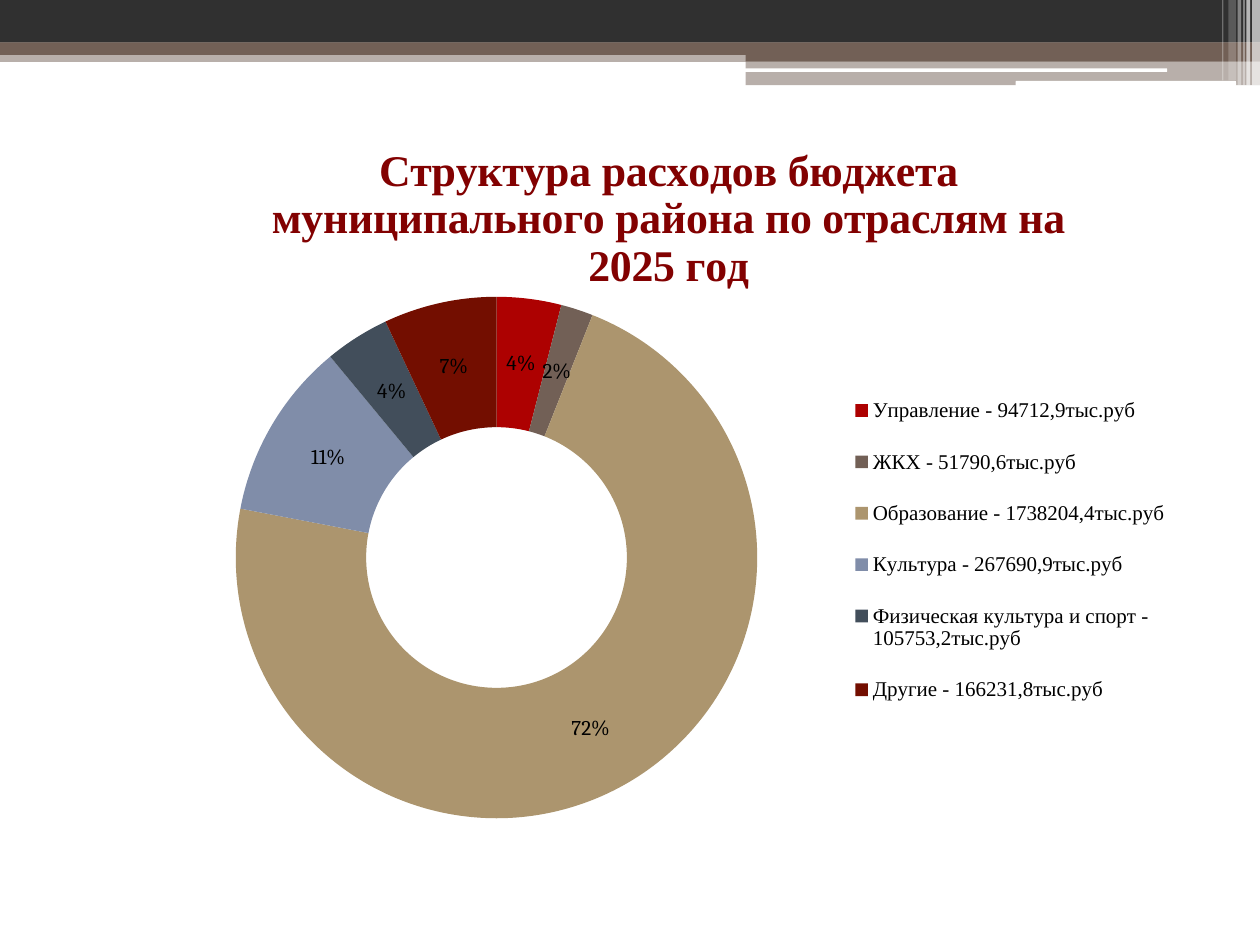
from lxml.etree import SubElement
from pptx import Presentation
from pptx.chart.data import CategoryChartData
from pptx.dml.color import RGBColor
from pptx.enum.chart import XL_CHART_TYPE as ChartType, XL_LEGEND_POSITION as LegendPosition
from pptx.enum.shapes import MSO_SHAPE as Shape
from pptx.oxml import parse_xml
from pptx.oxml.ns import nsdecls, qn
from pptx.util import Pt

WHITE = RGBColor(0xFF, 0xFF, 0xFF)
BLACK = RGBColor(0x00, 0x00, 0x00)
CHARCOAL = RGBColor(0x30, 0x30, 0x30)
BROWN = RGBColor(0x72, 0x60, 0x56)
TITLE_RED = RGBColor(0x82, 0x01, 0x01)
RED = RGBColor(0xAD, 0x01, 0x01)
SAND = RGBColor(0xAC, 0x95, 0x6E)
BLUE = RGBColor(0x80, 0x8D, 0xA9)
SLATE = RGBColor(0x42, 0x4E, 0x5B)
MAROON = RGBColor(0x73, 0x0E, 0x00)

TITLE = "Структура расходов бюджета муниципального района по отраслям на 2025 год"
EXPENSES = [
    ("Управление - 94712,9тыс.руб", 4, RED),
    ("ЖКХ - 51790,6тыс.руб", 2, BROWN),
    ("Образование - 1738204,4тыс.руб", 72, SAND),
    ("Культура - 267690,9тыс.руб", 11, BLUE),
    ("Физическая культура и спорт - 105753,2тыс.руб", 4, SLATE),
    ("Другие - 166231,8тыс.руб", 7, MAROON),
]


def add_bar(slide, left, top, width, height, color, opacity=100, kind=Shape.RECTANGLE):
    bar = slide.shapes.add_shape(kind, Pt(left), Pt(top), Pt(width), Pt(height))
    bar.shadow.inherit = False
    bar.line.fill.background()
    bar.fill.solid()
    bar.fill.fore_color.rgb = color
    if opacity < 100:
        color_element = bar.fill._xPr.find(".//" + qn("a:srgbClr"))
        SubElement(color_element, qn("a:alpha"), val=str(opacity * 1000))


def add_header(slide, left, top, width):
    right = left + width
    tab_width = 293.9
    tab_left = right - tab_width
    add_bar(slide, left, top + 28.8, width, 6.6, BROWN, 50)
    add_bar(slide, left, top, width, 24.4, CHARCOAL)
    add_bar(slide, left, top + 24.2, width, 7.2, BROWN)
    add_bar(slide, tab_left, top + 28, tab_width, 6.9, BROWN)
    add_bar(slide, tab_left, top + 34.7, tab_width, 14, BROWN, 50)
    add_bar(slide, tab_left - 0.4, top + 39.1, 241.2, 2, WHITE, kind=Shape.ROUNDED_RECTANGLE)
    add_bar(slide, right - 139.7, top + 46.3, 126, 2.9, WHITE, kind=Shape.ROUNDED_RECTANGLE)
    stripes = [
        (4.5, 4.5, 49, 65),
        (7.7, 2.1, 49, 65),
        (9.5, 0.7, 49, 60),
        (12.8, 2.1, 49, 40),
        (18, 4.3, 46, 20),
        (21.6, 0.7, 46, 30),
    ]
    for offset, stripe_width, height, opacity in stripes:
        add_bar(slide, right - offset, top, stripe_width, height, WHITE, opacity)


def set_layout(element, index, x, y, width=None, height=None, inner=False):
    for old in element.findall(qn("c:layout")):
        element.remove(old)
    layout = parse_xml(f"<c:layout {nsdecls('c')}><c:manualLayout/></c:layout>")
    values = [("xMode", "edge"), ("yMode", "edge"), ("x", x), ("y", y)]
    if inner:
        values.insert(0, ("layoutTarget", "inner"))
    if width:
        values += [("w", width), ("h", height)]
    for name, value in values:
        SubElement(layout[0], qn(f"c:{name}"), val=str(value))
    element.insert(index, layout)


def format_font(font, name, size, color):
    font.name = name
    font.size = Pt(size)
    font.color.rgb = color


def add_expense_chart(slide, left, top, width, height):
    data = CategoryChartData()
    data.categories = [name for name, share, color in EXPENSES]
    data.add_series("Series 1", [share for name, share, color in EXPENSES])
    chart = slide.shapes.add_chart(
        ChartType.DOUGHNUT, Pt(left), Pt(top), Pt(width), Pt(height), data
    ).chart
    format_font(chart.font, "Cambria", 12, BLACK)

    title = chart.chart_title
    title.text_frame.text = TITLE
    title_font = title.text_frame.paragraphs[0].runs[0].font
    format_font(title_font, "Times New Roman", 25, TITLE_RED)
    title_font.bold = True
    set_layout(title._element, 1, 0.13, 0.04)

    chart.has_legend = True
    legend = chart.legend
    legend.position = LegendPosition.RIGHT
    legend.include_in_layout = False
    format_font(legend.font, "Times New Roman", 12, BLACK)
    set_layout(legend._element, 1, 0.67, 0.36, 0.3, 0.49)

    plot = chart.plots[0]
    plot.vary_by_categories = True
    for index, (name, share, color) in enumerate(EXPENSES):
        fill = plot.series[0].points[index].format.fill
        fill.solid()
        fill.fore_color.rgb = color
    plot.has_data_labels = True
    labels = plot.data_labels
    labels.show_percentage = True
    labels.show_value = False
    labels.number_format = "0%"
    labels.number_format_is_linked = False
    format_font(labels.font, "Cambria", 12, BLACK)
    plot_area = chart._chartSpace.find(".//" + qn("c:plotArea"))
    set_layout(plot_area, 0, 0.1, 0.26, 0.49, 0.71, inner=True)


def main():
    presentation = Presentation()
    presentation.slide_width = Pt(720)
    presentation.slide_height = Pt(540)
    slide = presentation.slides.add_slide(presentation.slide_layouts[6])
    add_header(slide, 0, 0, 720)
    add_expense_chart(slide, 70.6, 60.5, 617.8, 419.8)
    presentation.save("out.pptx")


if __name__ == "__main__":
    main()
